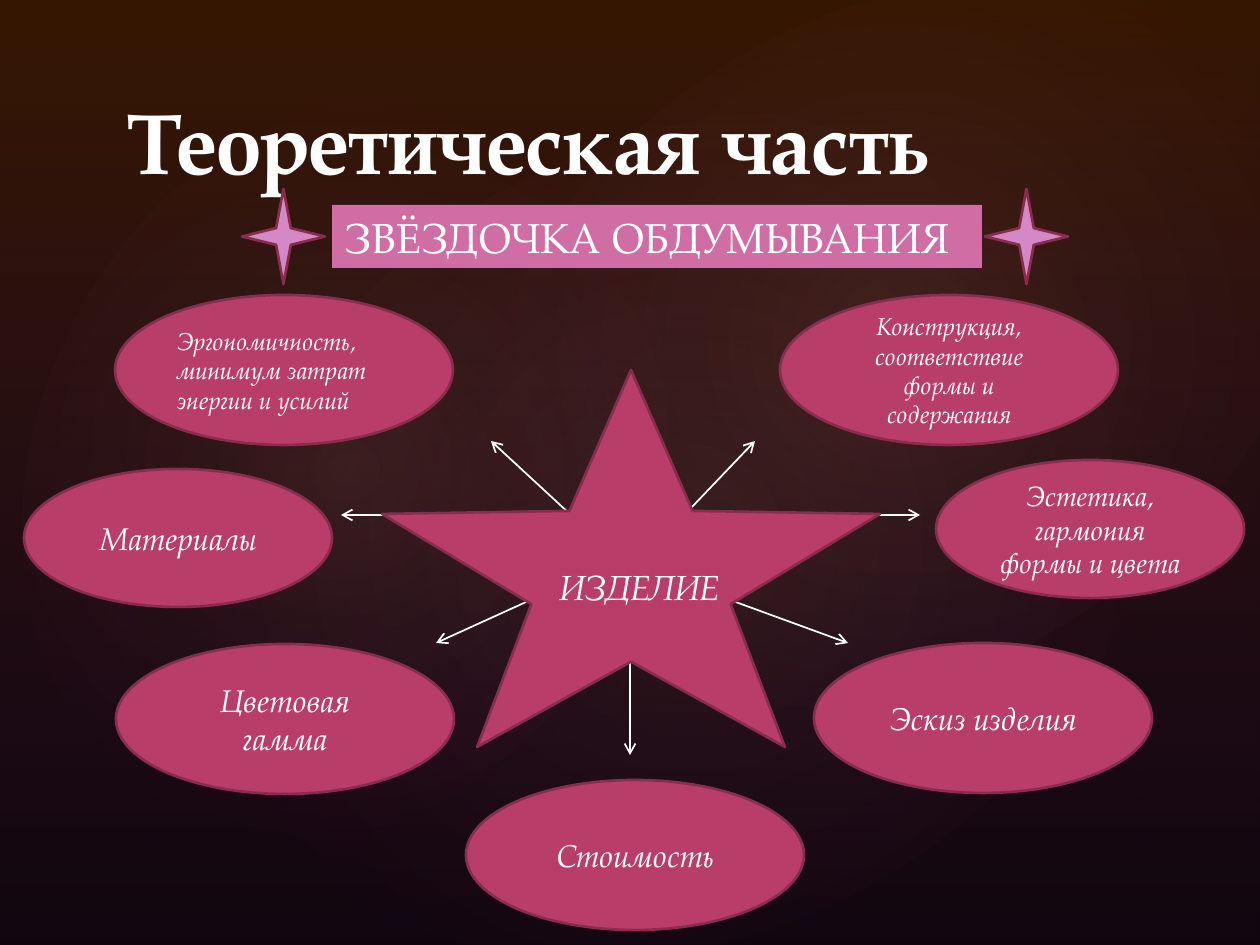
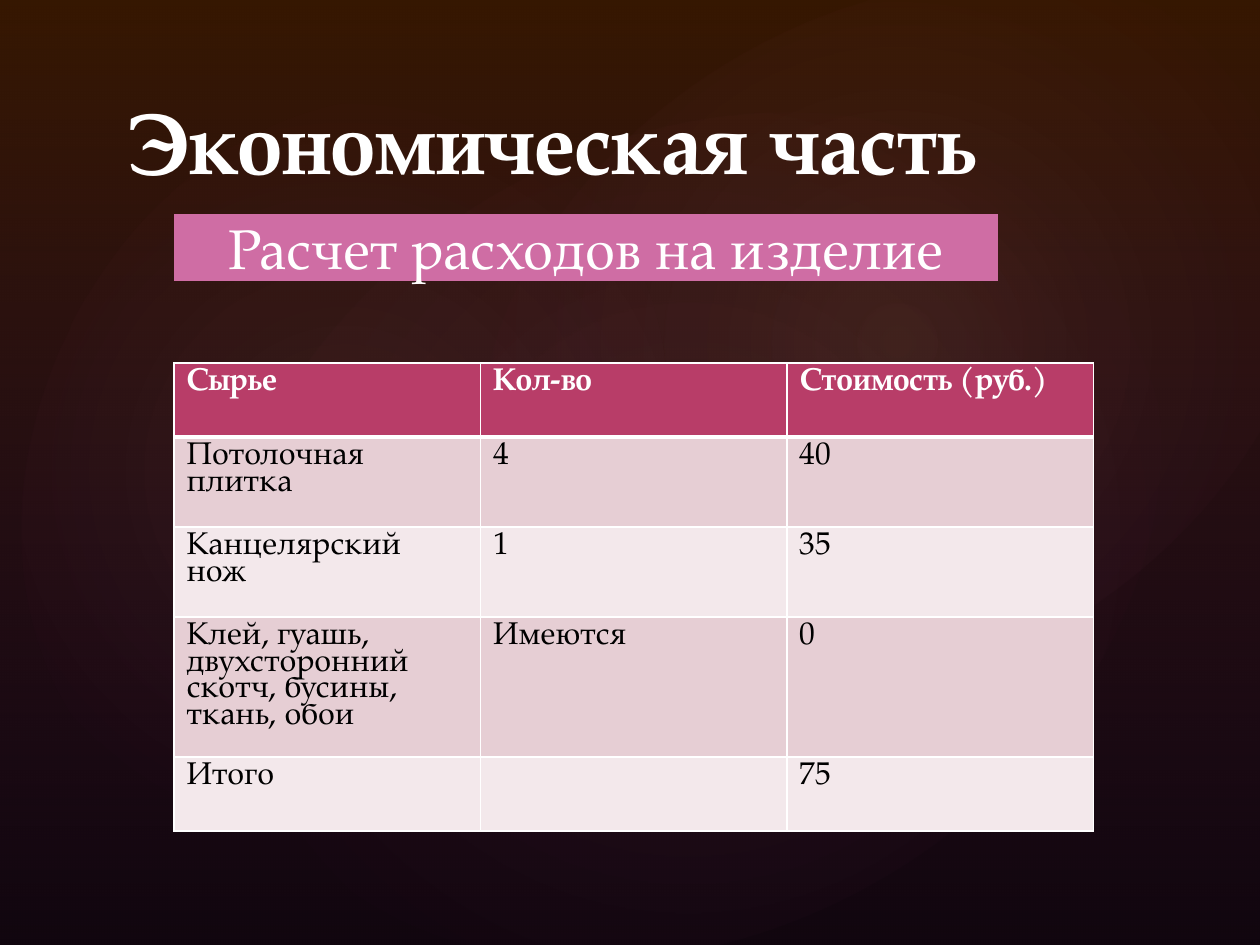
from dataclasses import dataclass

from lxml.etree import SubElement
from pptx import Presentation
from pptx.dml.color import RGBColor
from pptx.enum.shapes import MSO_CONNECTOR, MSO_SHAPE
from pptx.enum.text import MSO_ANCHOR, MSO_AUTO_SIZE, PP_ALIGN
from pptx.oxml import parse_xml
from pptx.oxml.ns import nsdecls, qn
from pptx.util import Emu, Pt


@dataclass(frozen=True)
class Theme:
    font: str = "TeX Gyre Pagella"
    black: str = "000000"
    white: str = "FFFFFF"
    berry: str = "B83D68"
    outline: str = "882D4D"
    band: str = "CF6DA4"
    lilac: str = "D488C5"
    row_dark: str = "E6CED4"
    row_light: str = "F3E8EB"
    brown: str = "984204"
    violet: str = "B13F9A"
    glow: str = "FCBB8B"
    title: int = 49
    subtitle: int = 32
    banner: int = 24
    center: int = 20
    body: int = 18
    medium: int = 16
    small: int = 14


T = Theme()
LINEAR = '<a:lin ang="5400000" scaled="0"/>'
RADIAL = '<a:path path="circle"><a:fillToRect l="50000" t="50000" r="50000" b="50000"/></a:path>'

# Left, top, width, height, rotation, opacity of the centre in percent
GLOWS = [
    (189, 144, 998, 786, 328.7, 7),
    (-38, 161, 764, 617, 294.3, 8),
    (451, 16, 893, 655, 328.7, 8),
]

# Start x, y and end x, y
ARROWS = [
    (421, 515, 341, 515),
    (755, 515, 920, 515),
    (630, 635, 630, 755),
    (546, 593, 436, 643),
    (610, 551, 491, 441),
    (650, 551, 755, 441),
    (711, 593, 848, 643),
]

BIG, SMALL = (338, 150), (308, 138)
C, L = PP_ALIGN.CENTER, PP_ALIGN.LEFT

# Left, top, size, type size, alignment, paragraphs
IDEAS = [
    (115, 295, BIG, T.small, L, ["Эргономичность,", "минимум затрат энергии и усилий"]),
    (780, 295, BIG, T.small, C, ["Конструкция, соответствие формы и содержания"]),
    (814, 643, BIG, T.body, C, ["Эскиз изделия"]),
    (116, 644, BIG, T.body, C, ["Цветовая гамма"]),
    (466, 780, BIG, T.body, C, ["Стоимость"]),
    (936, 460, SMALL, T.medium, C, ["Эстетика, гармония формы и цвета"]),
    (24, 469, SMALL, T.body, C, ["Материалы"]),
]

COSTS = [
    ["Сырье", "Кол-во", "Стоимость (руб.)"],
    ["Потолочная плитка", "4", "40"],
    ["Канцелярский нож", "1", "35"],
    ["Клей, гуашь, двухсторонний скотч, бусины, ткань, обои", "Имеются", "0"],
    ["Итого", "", "75"],
]
ROW_HEIGHTS = [74, 90, 90, 140, 74]
COLUMN_WIDTH = 306.6


def px(n):
    return Emu(round(n * 914400 / 126))


def rgb(color):
    return RGBColor.from_string(color)


# Text
def add_run(p, text, size, color=T.white, bold=False, italic=False):
    r = p.add_run()
    r.text = text
    r.font.name = T.font
    r.font.size = Pt(size)
    r.font.color.rgb = rgb(color)
    r.font.bold = bold
    r.font.italic = italic


def write(sp, paragraphs, size, align=C, anchor=MSO_ANCHOR.MIDDLE, **style):
    tf = sp.text_frame
    tf.word_wrap = True
    tf.auto_size = MSO_AUTO_SIZE.NONE
    tf.vertical_anchor = anchor
    for i, text in enumerate(paragraphs):
        p = tf.add_paragraph() if i else tf.paragraphs[0]
        p.alignment = align
        add_run(p, text, size, **style)
    return tf


# Shapes
def add_figure(s, kind, x, y, w, h, fill, line=None):
    sp = s.shapes.add_shape(kind, px(x), px(y), px(w), px(h))
    sp.shadow.inherit = False
    sp.fill.solid()
    sp.fill.fore_color.rgb = rgb(fill)
    if line:
        sp.line.color.rgb = rgb(line)
        sp.line.width = Pt(1.5)
    else:
        sp.line.fill.background()
    return sp


def add_arrow(s, x1, y1, x2, y2):
    c = s.shapes.add_connector(MSO_CONNECTOR.STRAIGHT, px(x1), px(y1), px(x2), px(y2))
    c.line.color.rgb = rgb(T.white)
    c.line.width = Pt(1)
    sp_pr = c._element.spPr
    SubElement(sp_pr.find(qn("a:ln")), qn("a:tailEnd"), type="arrow")
    SubElement(sp_pr, qn("a:effectLst"))


# Shared backdrop, kept on the slide master
def set_gradient(sp, stops, direction):
    gs = "".join(
        f'<a:gs pos="{pos * 1000}"><a:srgbClr val="{color}">'
        f'<a:alpha val="{alpha * 1000}"/></a:srgbClr></a:gs>'
        for pos, color, alpha in stops
    )
    gradient = parse_xml(
        f'<a:gradFill {nsdecls("a")} rotWithShape="1"><a:gsLst>{gs}</a:gsLst>{direction}</a:gradFill>'
    )
    sp_pr = sp._element.spPr
    sp_pr.replace(sp_pr.find(qn("a:solidFill")), gradient)


def build_backdrop(prs, s):
    master = prs.slide_master
    master.background.fill.solid()
    master.background.fill.fore_color.rgb = rgb(T.black)

    base = add_figure(s, MSO_SHAPE.RECTANGLE, 0, 0, 1260, 945, T.black)
    set_gradient(base, [(0, T.brown, 36), (100, T.violet, 10)], LINEAR)
    layers = [base]
    for x, y, w, h, rotation, alpha in GLOWS:
        sp = add_figure(s, MSO_SHAPE.OVAL, x, y, w, h, T.glow)
        sp.rotation = rotation
        set_gradient(sp, [(0, T.glow, alpha), (58, T.violet, 0)], RADIAL)
        layers.append(sp)
    for i, sp in enumerate(layers):
        sp._element.nvSpPr.cNvPr.set("id", str(100 + i))
        master.shapes._spTree.insert(2 + i, sp._element)


def add_titled_slide(prs, title):
    s = prs.slides.add_slide(prs.slide_layouts[5])
    sp = s.shapes.title
    sp.left, sp.top, sp.width, sp.height = px(115), px(66), px(1040), px(126)
    tf = write(sp, [title], T.title, L, MSO_ANCHOR.BOTTOM, bold=True)
    tf.margin_bottom = 0
    return s


def add_band(s, x, y, w, h, text, size, align, anchor):
    sp = add_figure(s, MSO_SHAPE.RECTANGLE, x, y, w, h, T.band)
    return write(sp, [text], size, align, anchor)


# Star diagram
def build_star(s):
    for arrow in ARROWS:
        add_arrow(s, *arrow)

    star = add_figure(s, MSO_SHAPE.STAR_5_POINT, 382, 370, 498, 377, T.berry, T.outline)
    star.adjustments[0] = 0.2
    tf = write(star, ["ИЗДЕЛИЕ"], T.center, italic=True)
    tf.margin_left, tf.margin_right = px(20), px(4)

    for x, y, (w, h), size, align, paragraphs in IDEAS:
        sp = add_figure(s, MSO_SHAPE.OVAL, x, y, w, h, T.berry, T.outline)
        write(sp, paragraphs, size, align, italic=True)

    add_band(s, 332, 205, 650, 63, "ЗВЁЗДОЧКА ОБДУМЫВАНИЯ", T.banner, L, MSO_ANCHOR.TOP)
    for x in (242, 985):
        add_figure(s, MSO_SHAPE.STAR_4_POINT, x, 189, 83, 95, T.lilac, T.outline)


# Cost table
def set_borders(cell, **widths):
    tc_pr = cell._tc.get_or_add_tcPr()
    for side in "LRTB":
        tc_pr.append(parse_xml(
            f'<a:ln{side} {nsdecls("a")} w="{Pt(widths.get(side, 1))}"><a:solidFill>'
            f'<a:srgbClr val="{T.white}"/></a:solidFill></a:ln{side}>'
        ))


def add_cost_table(s, x, y):
    frame = s.shapes.add_table(
        len(COSTS), len(COSTS[0]), px(x), px(y),
        px(COLUMN_WIDTH * len(COSTS[0])), px(sum(ROW_HEIGHTS)),
    )
    table = frame.table
    table.horz_banding = False
    for column in table.columns:
        column.width = px(COLUMN_WIDTH)
    for i, (values, height) in enumerate(zip(COSTS, ROW_HEIGHTS)):
        table.rows[i].height = px(height)
        header = i == 0
        fill = T.berry if header else (T.row_light, T.row_dark)[i % 2]
        edges = {0: {"B": 3}, 1: {"T": 3}}.get(i, {})
        for j, text in enumerate(values):
            cell = table.cell(i, j)
            set_borders(cell, **edges)
            cell.fill.solid()
            cell.fill.fore_color.rgb = rgb(fill)
            p = cell.text_frame.paragraphs[0]
            p.line_spacing = 0.84
            if text:
                add_run(p, text, T.body, T.white if header else T.black, bold=header)


def main():
    prs = Presentation()
    prs.slide_width, prs.slide_height = px(1260), px(945)

    theory = add_titled_slide(prs, "Теоретическая часть")
    build_backdrop(prs, theory)
    build_star(theory)

    economy = add_titled_slide(prs, "Экономическая часть")
    add_cost_table(economy, 174, 363)
    tf = add_band(economy, 174, 214, 824, 67, "Расчет расходов на изделие",
                  T.subtitle, C, MSO_ANCHOR.BOTTOM)
    tf.margin_top = tf.margin_bottom = 0

    prs.save("out.pptx")


if __name__ == "__main__":
    main()
